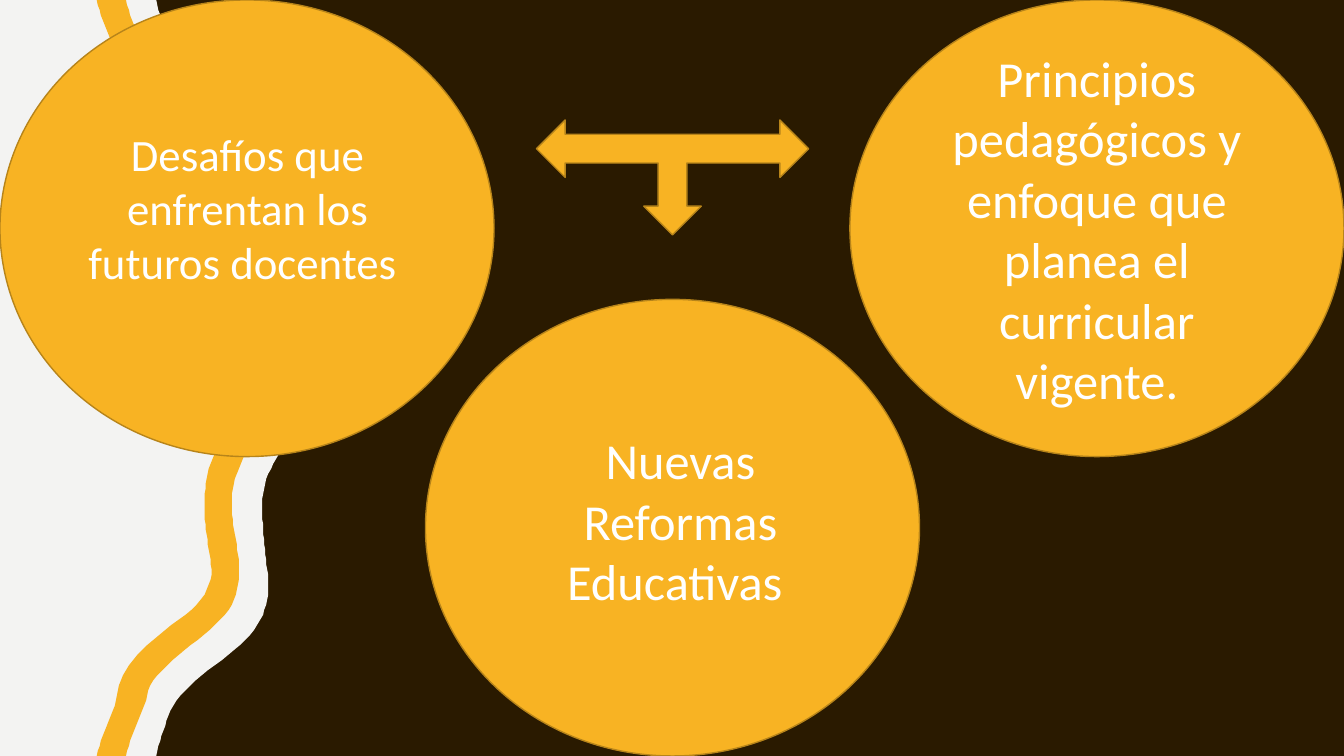
"""Build a slide of three linked circles beside a wavy ribbon."""
from pptx import Presentation
from pptx.dml.color import RGBColor
from pptx.enum.shapes import MSO_SHAPE
from pptx.enum.text import MSO_ANCHOR, MSO_AUTO_SIZE, PP_ALIGN
from pptx.util import Pt

OVAL = MSO_SHAPE.OVAL
ARROW = MSO_SHAPE.LEFT_RIGHT_UP_ARROW
TOP, MIDDLE = MSO_ANCHOR.TOP, MSO_ANCHOR.MIDDLE
CENTER = PP_ALIGN.CENTER
GROW, FIXED = MSO_AUTO_SIZE.SHAPE_TO_FIT_TEXT, MSO_AUTO_SIZE.NONE
PX = 9144
WIDE, HIGH = 1333, 750
STEP, PARTS = 25, 5
THEME = {
    "back": RGBColor(0x2A, 0x1A, 0x00),
    "paper": RGBColor(0xF3, 0xF3, 0xF2),
    "gold": RGBColor(0xF8, 0xB3, 0x23),
    "edge": RGBColor(0xB7, 0x84, 0x1A),
    "text": RGBColor(0xFF, 0xFF, 0xFF),
    "font": "Calibri",
    "large": 36,
    "small": 32,
}


def write(frame, text, size=THEME["large"], anchor=TOP, fit=GROW):
    frame.word_wrap = True
    frame.auto_size = fit
    frame.vertical_anchor = anchor
    line = frame.paragraphs[0]
    line.alignment = CENTER
    run = line.add_run()
    run.text = text
    run.font.name = THEME["font"]
    run.font.size = Pt(size)
    run.font.color.rgb = THEME["text"]


def wave(half):
    """Mirror x values, one per STEP down, and join them by a smooth spline."""
    knots = half + half[-2::-1]
    ends = [knots[0]] + knots + [knots[-1]]
    points = []
    for row in range(len(knots) - 1):
        a, b, c, d = ends[row:row + 4]
        for part in range(PARTS):
            t = part / PARTS
            bend = (2 * a - 5 * b + 4 * c - d) * t ** 2
            twist = (3 * b - a - 3 * c + d) * t ** 3
            x = b + ((c - a) * t + bend + twist) / 2
            points.append((x, (row + t) * STEP))
    return points + [(knots[-1], HIGH)]


deck = Presentation()
deck.slide_width, deck.slide_height = WIDE * PX, HIGH * PX
slide = deck.slides.add_slide(deck.slide_layouts[6])
slide.background.fill.solid()
slide.background.fill.fore_color.rgb = THEME["back"]
shapes = slide.shapes

shore = wave([155, 162, 172, 194, 226, 252, 264, 266,
              263, 261, 260, 264, 277, 291, 303, 308])
right = wave([125, 133, 143, 152, 177, 208, 230, 237,
              236, 232, 230, 233, 244, 258, 271, 276])
left = wave([96, 104, 114, 120, 136, 164, 195, 209,
             208, 204, 203, 205, 213, 227, 240, 248])
side = [(0, 0), (0, HIGH)]
bands = [(side, shore, THEME["paper"]), (left, right, THEME["gold"])]
for near, far, color in bands:
    outline = far + near[::-1]
    pen = shapes.build_freeform(*outline[0], scale=PX)
    pen.add_line_segments(outline[1:], close=True)
    band = pen.convert_to_shape()
    band.shadow.inherit = False
    band.fill.solid()
    band.fill.fore_color.rgb = color
    band.line.fill.background()

oval_w, oval_h = 490, 453
arrow_w, arrow_h = 270, 114
oval_x = round((WIDE - oval_w) / 2)
arrow_x = round((WIDE - arrow_w) / 2)
marks = [
    (OVAL, 0, 0, oval_w, oval_h, 0, ""),
    (OVAL, oval_x, HIGH - oval_h, oval_w, oval_h, 0, ""),
    (OVAL, WIDE - oval_w, 0, oval_w, oval_h, 0,
     "Principios pedagógicos y enfoque que planea el curricular vigente."),
    (ARROW, arrow_x, 119, arrow_w, arrow_h, 180, ""),
]
for kind, x, y, w, h, turn, text in marks:
    mark = shapes.add_shape(kind, x * PX, y * PX, w * PX, h * PX)
    mark.rotation = turn
    mark.shadow.inherit = False
    mark.fill.solid()
    mark.fill.fore_color.rgb = THEME["gold"]
    mark.line.color.rgb = THEME["edge"]
    mark.line.width = Pt(1)
    if text:
        write(mark.text_frame, text, anchor=MIDDLE, fit=FIXED)

labels = [
    (66, 121, 359, 226, THEME["small"],
     "Desafíos que enfrentan los futuros docentes "),
    (502, 421, 346, 192, THEME["large"], "Nuevas Reformas Educativas "),
]
for x, y, w, h, size, text in labels:
    box = shapes.add_textbox(x * PX, y * PX, w * PX, h * PX)
    write(box.text_frame, text, size=size)

deck.save("out.pptx")
